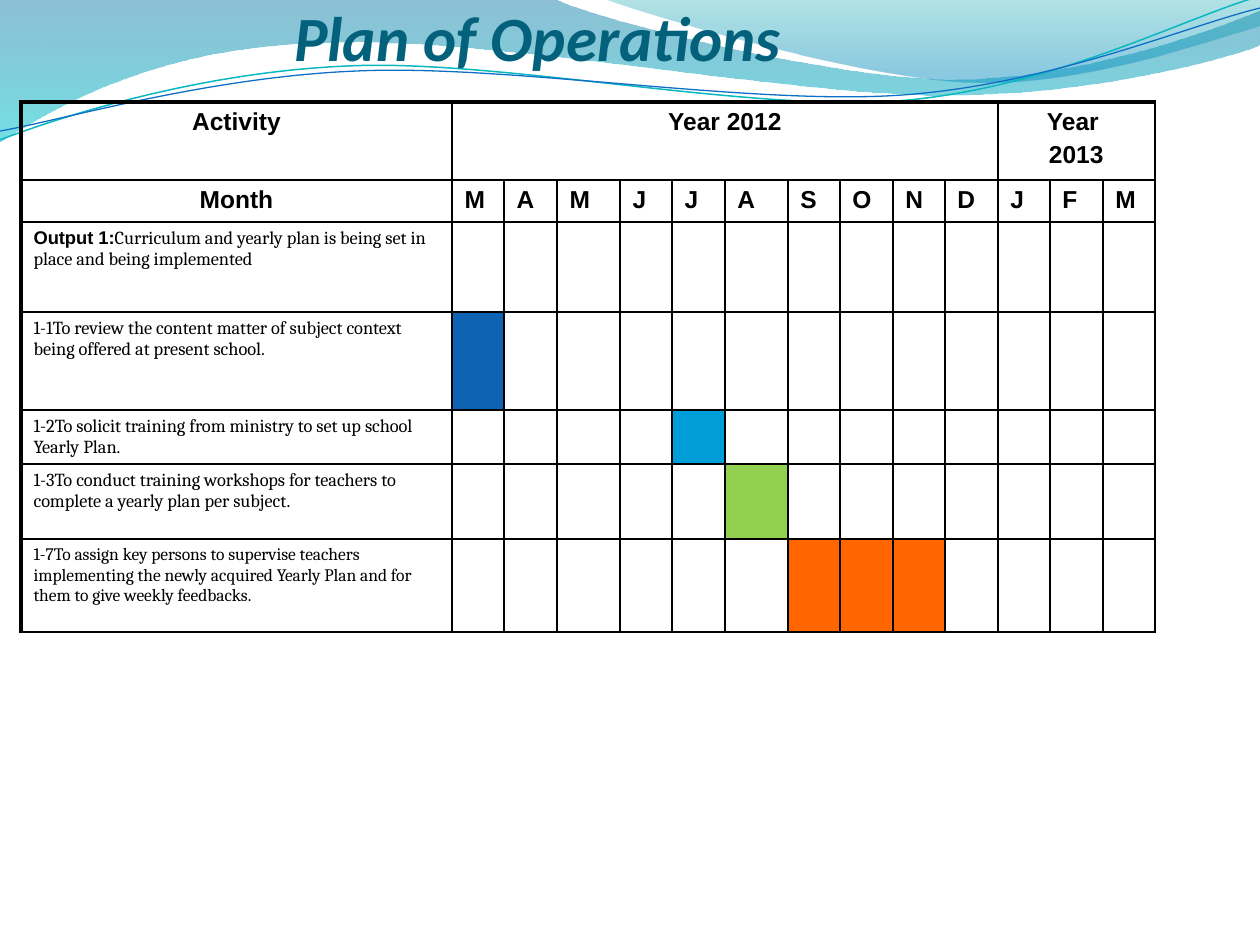
from dataclasses import dataclass
from math import cos, radians, sin

from lxml.etree import SubElement
from pptx import Presentation
from pptx.dml.color import RGBColor
from pptx.enum.text import MSO_ANCHOR, PP_ALIGN
from pptx.oxml.ns import qn
from pptx.util import Emu, Pt

PX = 914400 / 126
RIBBON_TILT = 2.7
BLACK = RGBColor(0x00, 0x00, 0x00)
TITLE = RGBColor(0x04, 0x61, 0x7B)
DEEP_BLUE = RGBColor(0x00, 0x74, 0xA1)
AQUA = RGBColor(0x00, 0xC6, 0xCF)
TEAL = RGBColor(0x00, 0xA1, 0xA9)
SKY = RGBColor(0x00, 0x8B, 0xBF)
TEAL_LINE = RGBColor(0x0A, 0xB8, 0xBF)
BLUE_LINE = RGBColor(0x0F, 0x6F, 0xC6)
BLUE = RGBColor(0x0E, 0x64, 0xB2)
CYAN = RGBColor(0x00, 0x9D, 0xD9)
GREEN = RGBColor(0x92, 0xD0, 0x50)
ORANGE = RGBColor(0xFF, 0x66, 0x00)


@dataclass
class Stop:
    position: float
    color: RGBColor
    opacity: int


@dataclass
class Wave:
    start: tuple
    segments: list
    stops: tuple


@dataclass
class Ribbon:
    center: tuple
    start: tuple
    segments: list
    color: RGBColor
    width: float


@dataclass
class Task:
    label: str
    height: int
    size: float = 10.5
    lead: str = ""
    first: int = 0
    months: int = 0
    color: RGBColor = BLACK


WAVES = [
    Wave((0, 0), [
        [(554, -1)],
        [(600, 21), (837, 79), (955, 79)],
        [(1075, 79), (1207, 33), (1260, 11)],
        [(1261, 45)],
        [(1239, 55), (1096, 96), (940, 95)],
        [(784, 95), (481, 35), (324, 43)],
        [(163, 45), (58, 105), (-1, 142)],
    ], (Stop(0, DEEP_BLUE, 45), Stop(1, AQUA, 55))),
    Wave((604, -1), [
        [(641, 14), (859, 78), (969, 82)],
        [(1079, 87), (1211, 40), (1260, 26)],
        [(1260, 0)],
    ], (Stop(0, TEAL, 30), Stop(0.8, SKY, 45))),
]
RIBBONS = [
    Ribbon((629, 72), (0, 140), [
        [(60, 117), (199, 72), (349, 66)],
        [(498, 59), (747, 112), (898, 101)],
        [(1050, 89), (1182, 19), (1257, -3)],
    ], TEAL_LINE, 0.85),
    Ribbon((629, 74), (0, 131), [
        [(59, 121), (207, 77), (357, 71)],
        [(508, 64), (752, 106), (903, 95)],
        [(1053, 84), (1186, 26), (1260, 8)],
    ], BLUE_LINE, 0.75),
]
MONTHS = "MAMJJASONDJFM"
COLUMNS = [431, 52, 53, 63, 52, 53, 63] + [52, 53] * 3 + [52]
HEADER_HEIGHTS = [78, 42]
TASKS = [
    Task("Curriculum and yearly plan is being set in place and being implemented",
         90, lead="Output 1:"),
    Task("1-1To review the content matter of subject context being offered at present school.",
         98, first=1, months=1, color=BLUE),
    Task("1-2To solicit training from ministry to set up school Yearly Plan.",
         54, first=5, months=1, color=CYAN),
    Task("1-3To conduct training workshops for teachers to complete a yearly plan per subject.",
         75, first=6, months=1, color=GREEN),
    Task("1-7To assign key persons to supervise teachers implementing the newly acquired "
         "Yearly Plan and for them to give weekly feedbacks.",
         93, size=10, first=7, months=3, color=ORANGE),
]


def px(n: float) -> Emu:
    return Emu(round(n * PX))


def turn(point: tuple, center: tuple, degrees: float) -> tuple:
    a = radians(degrees)
    dx, dy = point[0] - center[0], point[1] - center[1]
    return (center[0] + dx * cos(a) - dy * sin(a),
            center[1] + dx * sin(a) + dy * cos(a))


def add_path(s, start: tuple, segments: list, close: bool):
    builder = s.shapes.build_freeform(px(start[0]), px(start[1]))
    builder.add_line_segments([(px(x), px(y)) for seg in segments for x, y in seg],
                              close=close)
    sp = builder.convert_to_shape()
    sp.shadow.inherit = False
    steps = iter(list(sp._element.iter(qn("a:lnTo"))))
    for seg in segments:
        nodes = [next(steps) for _ in seg]
        if len(nodes) == 3:
            curve = nodes[0].getparent().makeelement(qn("a:cubicBezTo"))
            nodes[0].addprevious(curve)
            for node in nodes:
                curve.append(node[0])
                node.getparent().remove(node)
    return sp


def add_wave(s, wave: Wave) -> None:
    sp = add_path(s, wave.start, wave.segments, True)
    sp.line.fill.background()
    sp.fill.gradient()
    sp.fill.gradient_angle = 270
    for gs, stop in zip(sp.fill.gradient_stops, wave.stops):
        gs.position = stop.position
        gs.color.rgb = stop.color
    colors = sp.fill._xPr.iter(qn("a:srgbClr"))
    for clr, stop in zip(colors, wave.stops):
        SubElement(clr, qn("a:alpha"), val=str(stop.opacity * 1000))


def add_ribbon(s, ribbon: Ribbon) -> None:
    start = turn(ribbon.start, ribbon.center, RIBBON_TILT)
    segments = [[turn(pt, ribbon.center, RIBBON_TILT) for pt in seg]
                for seg in ribbon.segments]
    sp = add_path(s, start, segments, False)
    sp.rotation = -RIBBON_TILT
    sp.fill.background()
    sp.line.color.rgb = ribbon.color
    sp.line.width = Pt(ribbon.width)


def add_title(s, text: str) -> None:
    tf = s.shapes.add_textbox(px(294), px(21), px(735), px(53)).text_frame
    tf.word_wrap = True
    tf.vertical_anchor = MSO_ANCHOR.BOTTOM
    tf.margin_left = tf.margin_right = tf.margin_bottom = 0
    p = tf.paragraphs[0]
    p.text = text
    set_font(p.font, "Calibri", 36, True, TITLE)
    p.font.italic = True


def set_font(font, name: str, size: float, bold: bool, color: RGBColor = BLACK) -> None:
    font.name, font.size, font.bold = name, Pt(size), bold
    font.color.rgb = color


def set_borders(cell, left: float, top: float) -> None:
    tc_pr = cell._tc.get_or_add_tcPr()
    for tag, width in (("lnL", left), ("lnR", 1), ("lnT", top), ("lnB", 1)):
        ln = SubElement(tc_pr, qn(f"a:{tag}"), w=str(Pt(width)))
        SubElement(SubElement(ln, qn("a:solidFill")), qn("a:srgbClr"), val=str(BLACK))


def write_header(cell, *lines: str, align=PP_ALIGN.CENTER) -> None:
    tf = cell.text_frame
    for i, line in enumerate(lines):
        p = tf.add_paragraph() if i else tf.paragraphs[0]
        p.text, p.alignment = line, align
        p.space_before = Pt(2.8 if i else 0)
        set_font(p.font, "Arial", 14, True)


def write_task(table, row: int, task: Task) -> None:
    p = table.cell(row, 0).text_frame.paragraphs[0]
    if task.lead:
        r = p.add_run()
        r.text = task.lead
        set_font(r.font, "Arial", task.size, True)
    r = p.add_run()
    r.text = task.label
    set_font(r.font, "Cambria", task.size, False)
    for col in range(task.first, task.first + task.months):
        fill = table.cell(row, col).fill
        fill.solid()
        fill.fore_color.rgb = task.color


def add_schedule(s) -> None:
    heights = HEADER_HEIGHTS + [task.height for task in TASKS]
    table = s.shapes.add_table(len(heights), len(COLUMNS), px(21), px(102),
                               px(sum(COLUMNS)), px(sum(heights))).table
    table.first_row = table.horz_banding = False
    for column, width in zip(table.columns, COLUMNS):
        column.width = px(width)
    for i, (row, height) in enumerate(zip(table.rows, heights)):
        row.height = px(height)
        for j, cell in enumerate(row.cells):
            set_borders(cell, 1 if j else 2.25, 1 if i else 2.25)
            cell.fill.background()
            cell.margin_bottom = px(3)
    table.cell(0, 1).merge(table.cell(0, 10))
    table.cell(0, 11).merge(table.cell(0, 13))
    write_header(table.cell(0, 0), "Activity")
    write_header(table.cell(0, 1), "Year 2012")
    write_header(table.cell(0, 11), "Year ", "2013")
    write_header(table.cell(1, 0), "Month")
    for col, month in enumerate(MONTHS, 1):
        write_header(table.cell(1, col), month, align=PP_ALIGN.LEFT)
    for row, task in enumerate(TASKS, len(HEADER_HEIGHTS)):
        write_task(table, row, task)


def main() -> None:
    prs = Presentation()
    prs.slide_width, prs.slide_height = px(1260), px(945)
    s = prs.slides.add_slide(prs.slide_layouts[6])
    for wave in WAVES:
        add_wave(s, wave)
    for ribbon in RIBBONS:
        add_ribbon(s, ribbon)
    add_title(s, "Plan of Operations")
    add_schedule(s)
    prs.save("out.pptx")


if __name__ == "__main__":
    main()
